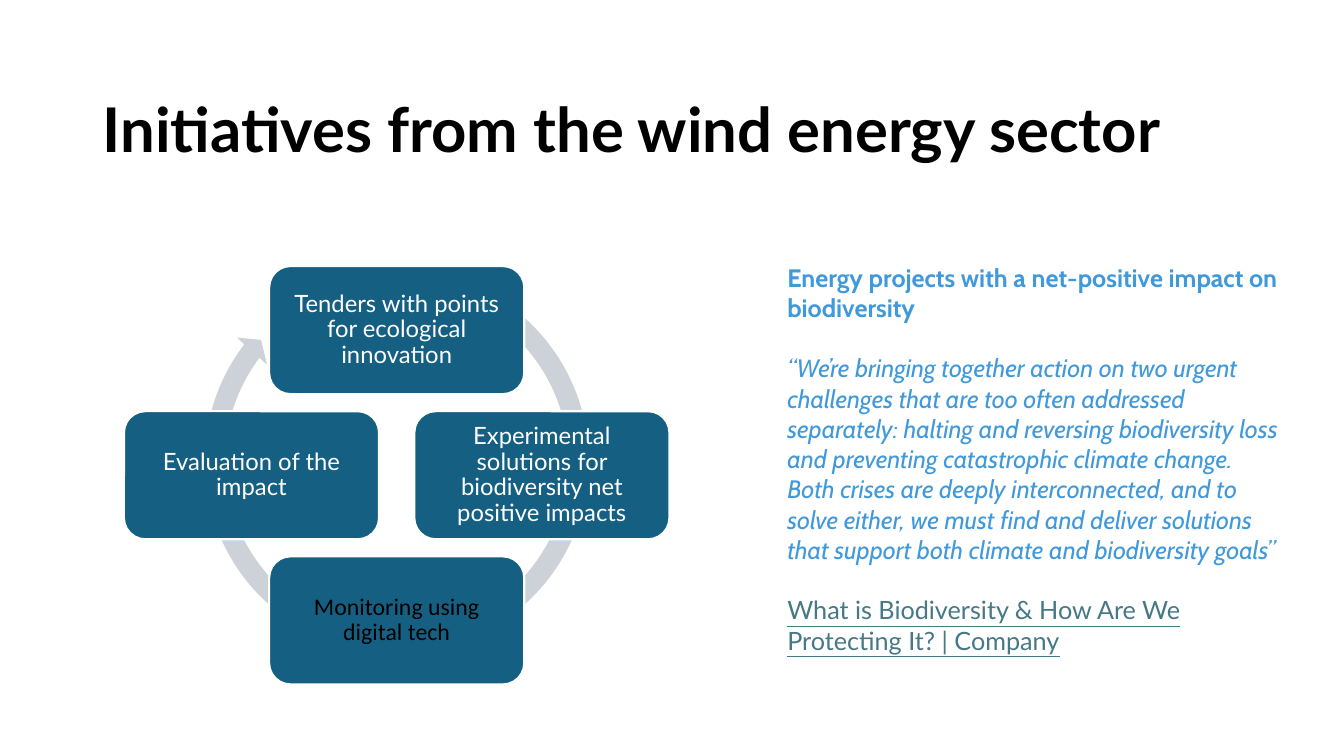
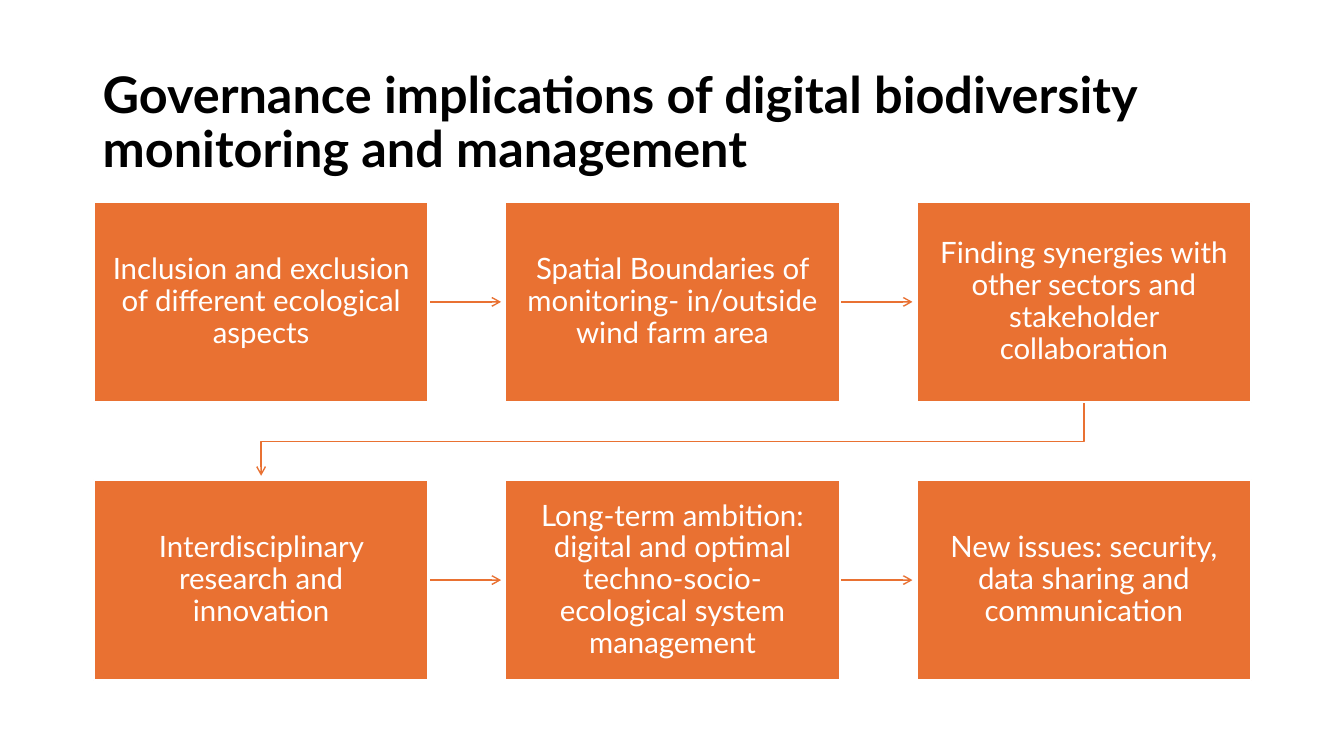
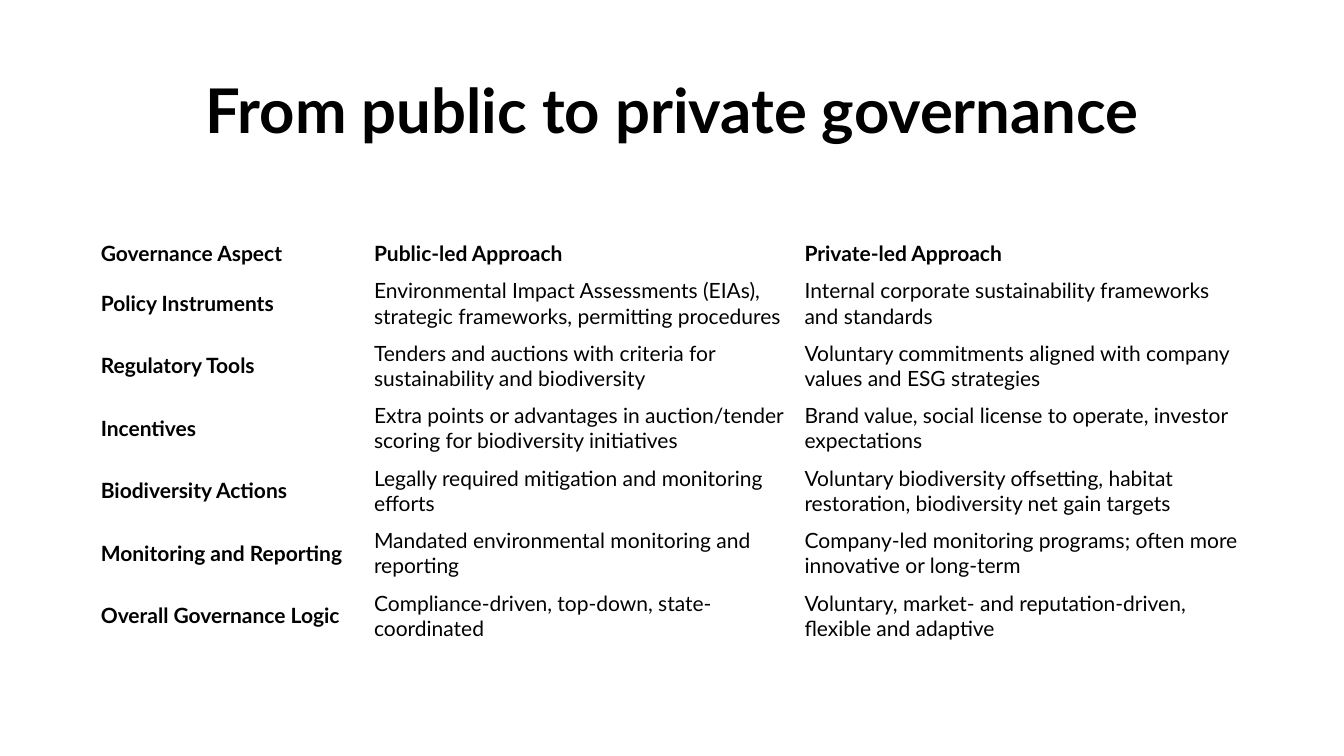
from lxml.etree import SubElement
from pptx import Presentation
from pptx.dml.color import RGBColor
from pptx.enum.shapes import MSO_CONNECTOR, MSO_SHAPE
from pptx.enum.text import MSO_ANCHOR, PP_ALIGN
from pptx.oxml.ns import qn
from pptx.util import Inches, Pt

BLACK, WHITE, GREY = "000000", "FFFFFF", "CCD2D8"
BLUE, SKY, TEAL, ORANGE = "156082", "4099DA", "467886", "E97132"
LEFT, MID = PP_ALIGN.LEFT, PP_ALIGN.CENTER


def write(par, text, color=BLACK, align=LEFT, **form):
    """Put one styled run into a paragraph."""
    par.alignment = align
    run = par.add_run()
    run.text = text
    form = {"name": "Lato", **form}
    for key, value in form.items():
        setattr(run.font, key, value)
    run.font.color.rgb = RGBColor.from_string(color)


def box(slide, kind, area, fill, text, pad, **form):
    """Add a filled box with a white edge and centred text."""
    shape = slide.shapes.add_shape(kind, *map(Inches, area))
    shape.shadow.inherit = False
    shape.fill.solid()
    shape.fill.fore_color.rgb = RGBColor.from_string(fill)
    shape.line.color.rgb = RGBColor.from_string(WHITE)
    shape.line.width = Pt(1.5)
    frame = shape.text_frame
    frame.word_wrap = True
    frame.vertical_anchor = MSO_ANCHOR.MIDDLE
    for side in ("left", "top", "right", "bottom"):
        setattr(frame, "margin_" + side, Inches(pad))
    frame.paragraphs[0].line_spacing = 0.9
    write(frame.paragraphs[0], text, align=MID, **form)


deck = Presentation()
deck.slide_width, deck.slide_height = Inches(13.33), Inches(7.5)

# Slides and titles: text, top, height, size, alignment
titles = [
    ("Initiatives from the wind energy sector", 0.59, 1.45, 44, LEFT),
    ("Governance implications of digital biodiversity monitoring and management",
     0.61, 1.24, 36, LEFT),
    ("From public to private governance", 0.4, 1.45, 44, MID),
]
for text, top, high, size, align in titles:
    slide = deck.slides.add_slide(deck.slide_layouts[6])
    area = (0.92, top, 11.5, high)
    frame = slide.shapes.add_textbox(*map(Inches, area)).text_frame
    frame.word_wrap = True
    frame.vertical_anchor = MSO_ANCHOR.MIDDLE
    frame.paragraphs[0].line_spacing = 0.9
    write(frame.paragraphs[0], text, align=align, size=Pt(size), bold=True)
first, second, third = deck.slides

# Cycle: ring behind four boxes
ring = first.shapes.add_shape(
    MSO_SHAPE.CIRCULAR_ARROW, *map(Inches, (1.93, 2.57, 4.01, 4.01)))
ring.shadow.inherit = False
ring.fill.solid()
ring.fill.fore_color.rgb = RGBColor.from_string(GREY)
ring.line.fill.background()
# Band, head angle, end angle, start angle, head width
for i, value in enumerate((0.05, 2.73, 130.35, 178.94, 0.05)):
    ring.adjustments[i] = value

STEP = 1.44
steps = [
    (0, -1, "Tenders with points for ecological innovation", {}),
    (1, 0, "Experimental solutions for biodiversity net positive impacts", {}),
    (0, 1, "Monitoring using digital tech", {"name": "Calibri", "color": BLACK}),
    (-1, 0, "Evaluation of the impact", {}),
]
for across, down, text, extra in steps:
    area = (2.67 + across * STEP, 4.08 + down * STEP, 2.53, 1.27)
    form = {"size": Pt(17), "color": WHITE, **extra}
    box(first, MSO_SHAPE.ROUNDED_RECTANGLE, area, BLUE, text, 0.13, **form)

# Quote beside the cycle
frame = first.shapes.add_textbox(
    *map(Inches, (7.71, 2.55, 5.09, 4.34))).text_frame
frame.word_wrap = True
quote = [
    ("Energy projects with a net-positive impact on biodiversity",
     {"name": "Cabin", "color": SKY, "bold": True}),
    ("“We’re bringing together action on two urgent challenges that are too "
     "often addressed separately: halting and reversing biodiversity loss and "
     "preventing catastrophic climate change. Both crises are deeply "
     "interconnected, and to solve either, we must find and deliver solutions "
     "that support both climate and biodiversity goals”",
     {"name": "Cabin", "color": SKY, "italic": True}),
    ("What is Biodiversity & How Are We Protecting It? | Company",
     {"color": TEAL, "underline": True}),
]
for i, (text, form) in enumerate(quote):
    par = frame.add_paragraph() if i else frame.paragraphs[0]
    if i:
        par.space_before = Pt(21.6)
    write(par, text, size=Pt(18), **form)

# Flow: grid of boxes joined by arrows
X, Y, WIDE, HIGH, COL, ROW = 0.93, 2, 3.32, 1.99, 4.08, 2.76
flow = [
    "Inclusion and exclusion of different ecological aspects",
    "Spatial Boundaries of monitoring- in/outside wind farm area",
    "Finding synergies with other sectors and stakeholder collaboration",
    "Interdisciplinary research and innovation",
    "Long-term ambition: digital and optimal techno-socio-ecological system "
    "management",
    "New issues: security, data sharing and communication",
]
arrows = []
for row in range(2):
    for col in range(2):
        start = X + WIDE + col * COL
        mid = Y + HIGH / 2 + row * ROW
        arrows.append(second.shapes.add_connector(
            MSO_CONNECTOR.STRAIGHT,
            *map(Inches, (start, mid, start + 0.72, mid))))

# Bent arrow from the last box of row one to the first of row two
near, far = X + WIDE / 2, X + WIDE / 2 + 2 * COL
turn = Y + HIGH + 0.39
path = [(far, turn), (near, turn), (near, Y + ROW - 0.04)]
bend = second.shapes.build_freeform(Inches(far), Inches(Y + HIGH))
bend.add_line_segments([(Inches(x), Inches(y)) for x, y in path], close=False)
bent = bend.convert_to_shape()
bent.fill.background()
arrows.append(bent)

for arrow in arrows:
    arrow.line.color.rgb = RGBColor.from_string(ORANGE)
    arrow.line.width = Pt(1)
    props = arrow._element.spPr
    SubElement(props.find(qn("a:ln")), qn("a:tailEnd"), type="arrow")
    SubElement(props, qn("a:effectLst"))

for i, text in enumerate(flow):
    row, col = divmod(i, 3)
    area = (X + col * COL, Y + row * ROW, WIDE, HIGH)
    box(second, MSO_SHAPE.RECTANGLE, area, ORANGE, text, 0.16,
        size=Pt(21), color=WHITE)

# Table of approaches
rows = [
    ("Governance Aspect", "Public-led Approach", "Private-led Approach"),
    ("Policy Instruments",
     "Environmental Impact Assessments (EIAs), strategic frameworks, "
     "permitting procedures",
     "Internal corporate sustainability frameworks and standards"),
    ("Regulatory Tools",
     "Tenders and auctions with criteria for sustainability and biodiversity",
     "Voluntary commitments aligned with company values and ESG strategies"),
    ("Incentives",
     "Extra points or advantages in auction/tender scoring for biodiversity "
     "initiatives",
     "Brand value, social license to operate, investor expectations"),
    ("Biodiversity Actions",
     "Legally required mitigation and monitoring efforts",
     "Voluntary biodiversity offsetting, habitat restoration, biodiversity "
     "net gain targets"),
    ("Monitoring and Reporting",
     "Mandated environmental monitoring and reporting",
     "Company-led monitoring programs; often more innovative or long-term"),
    ("Overall Governance Logic",
     "Compliance-driven, top-down, state-coordinated",
     "Voluntary, market- and reputation-driven, flexible and adaptive"),
]
table = third.shapes.add_table(
    len(rows), 3, *map(Inches, (0.92, 2.33, 11.5, 4.1))).table
table.first_row = table.horz_banding = False
for col, wide in zip(table.columns, (2.71, 4.27, 4.52)):
    col.width = Inches(wide)
pads = {"margin_left": 0.08, "margin_right": 0.08,
        "margin_top": 0.04, "margin_bottom": 0.04}
for r, texts in enumerate(rows):
    table.rows[r].height = Inches(0.62 if r else 0.37)
    for c, text in enumerate(texts):
        cell = table.cell(r, c)
        cell.fill.background()
        cell.vertical_anchor = MSO_ANCHOR.MIDDLE
        for key, value in pads.items():
            setattr(cell, key, Inches(value))
        write(cell.text_frame.paragraphs[0], text, size=Pt(15),
              bold=r == 0 or c == 0)

deck.save("out.pptx")
